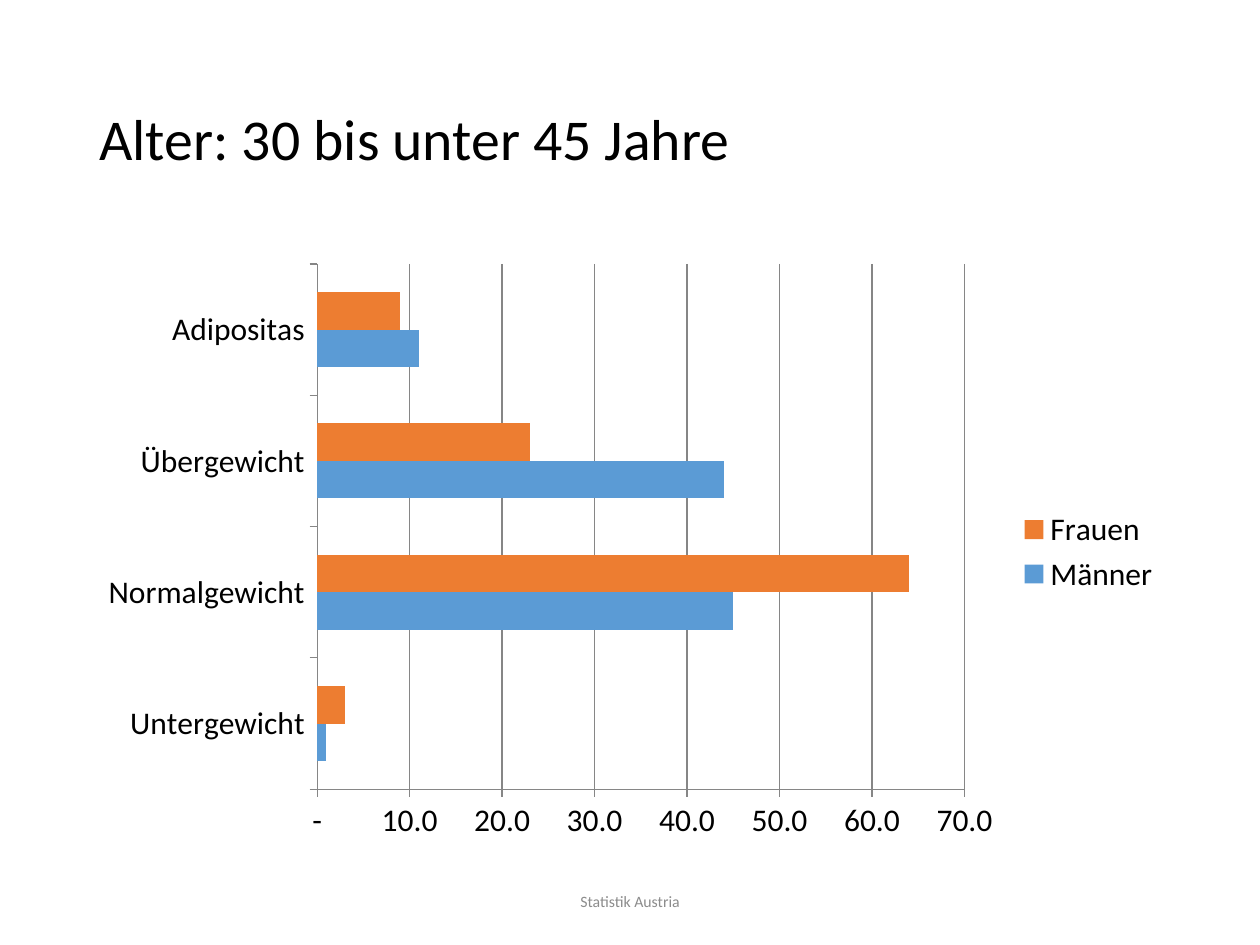
from dataclasses import dataclass

from pptx import Presentation
from pptx.chart.data import CategoryChartData
from pptx.dml.color import RGBColor
from pptx.enum.chart import XL_CHART_TYPE, XL_LEGEND_POSITION, XL_TICK_MARK
from pptx.enum.text import MSO_ANCHOR, PP_ALIGN
from pptx.util import Inches, Pt

BAR = XL_CHART_TYPE.BAR_CLUSTERED
LEGEND_RIGHT = XL_LEGEND_POSITION.RIGHT
TICK_OUT = XL_TICK_MARK.OUTSIDE
MIDDLE = MSO_ANCHOR.MIDDLE
LEFT, CENTER = PP_ALIGN.LEFT, PP_ALIGN.CENTER


@dataclass(frozen=True)
class Theme:
    font: str = "Calibri"
    text: str = "000000"
    muted: str = "8C8C8C"
    grid: str = "868686"
    men: str = "5B9BD5"
    women: str = "ED7D31"
    title_size: float = 33
    chart_size: float = 18
    footer_size: float = 9


def rgb(value):
    return RGBColor.from_string(value)


class SlideBuilder:
    def __init__(self, slide, theme):
        self.s = slide
        self.theme = theme

    def style_font(self, font, size, color):
        font.name = self.theme.font
        font.size = Pt(size)
        font.color.rgb = rgb(color)

    def style_line(self, line):
        line.color.rgb = rgb(self.theme.grid)
        line.width = Pt(0.75)

    def text(self, box, content, size, color, align=LEFT, spacing=1.0):
        tf = self.s.shapes.add_textbox(*map(Inches, box)).text_frame
        tf.word_wrap = True
        tf.vertical_anchor = MIDDLE
        p = tf.paragraphs[0]
        p.alignment = align
        p.line_spacing = spacing
        r = p.add_run()
        r.text = content
        self.style_font(r.font, size, color)

    def bar_chart(self, box, categories, series):
        """Draw clustered bars; series holds (name, values, color) rows."""
        data = CategoryChartData()
        data.categories = categories
        for name, values, _ in series:
            data.add_series(name, values)
        chart = self.s.shapes.add_chart(BAR, *map(Inches, box), data).chart
        self.style_font(chart.font, self.theme.chart_size, self.theme.text)
        chart.has_title = False
        chart.has_legend = True
        chart.legend.position = LEGEND_RIGHT
        chart.legend.include_in_layout = False

        plot = chart.plots[0]
        plot.gap_width = 150
        plot.overlap = 0
        plot.vary_by_categories = False
        for bars, (_, _, color) in zip(plot.series, series):
            bars.invert_if_negative = False
            bars.format.fill.solid()
            bars.format.fill.fore_color.rgb = rgb(color)

        for axis in (chart.category_axis, chart.value_axis):
            axis.major_tick_mark = TICK_OUT
            self.style_line(axis.format.line)
        axis = chart.value_axis
        axis.minimum_scale, axis.maximum_scale, axis.major_unit = 0, 70, 10
        axis.has_major_gridlines = True
        self.style_line(axis.major_gridlines.format.line)
        axis.tick_labels.number_format = '#,##0.0;#,##0.0;"-"'
        axis.tick_labels.number_format_is_linked = False


def main():
    prs = Presentation()
    prs.slide_width, prs.slide_height = Inches(10), Inches(7.5)
    theme = Theme()
    builder = SlideBuilder(prs.slides.add_slide(prs.slide_layouts[6]), theme)

    builder.text((0.69, 0.4, 8.62, 1.45), "Alter: 30 bis unter 45 Jahre",
                 theme.title_size, theme.text, spacing=0.9)
    builder.bar_chart(
        (0.69, 2, 8.62, 4.76),
        ["Untergewicht", "Normalgewicht", "Übergewicht", "Adipositas"],
        [("Männer", (1, 45, 44, 11), theme.men),
         ("Frauen", (3, 64, 23, 9), theme.women)])
    builder.text((3.31, 6.95, 3.38, 0.4), "Statistik Austria",
                 theme.footer_size, theme.muted, align=CENTER)

    prs.save("out.pptx")


if __name__ == "__main__":
    main()
